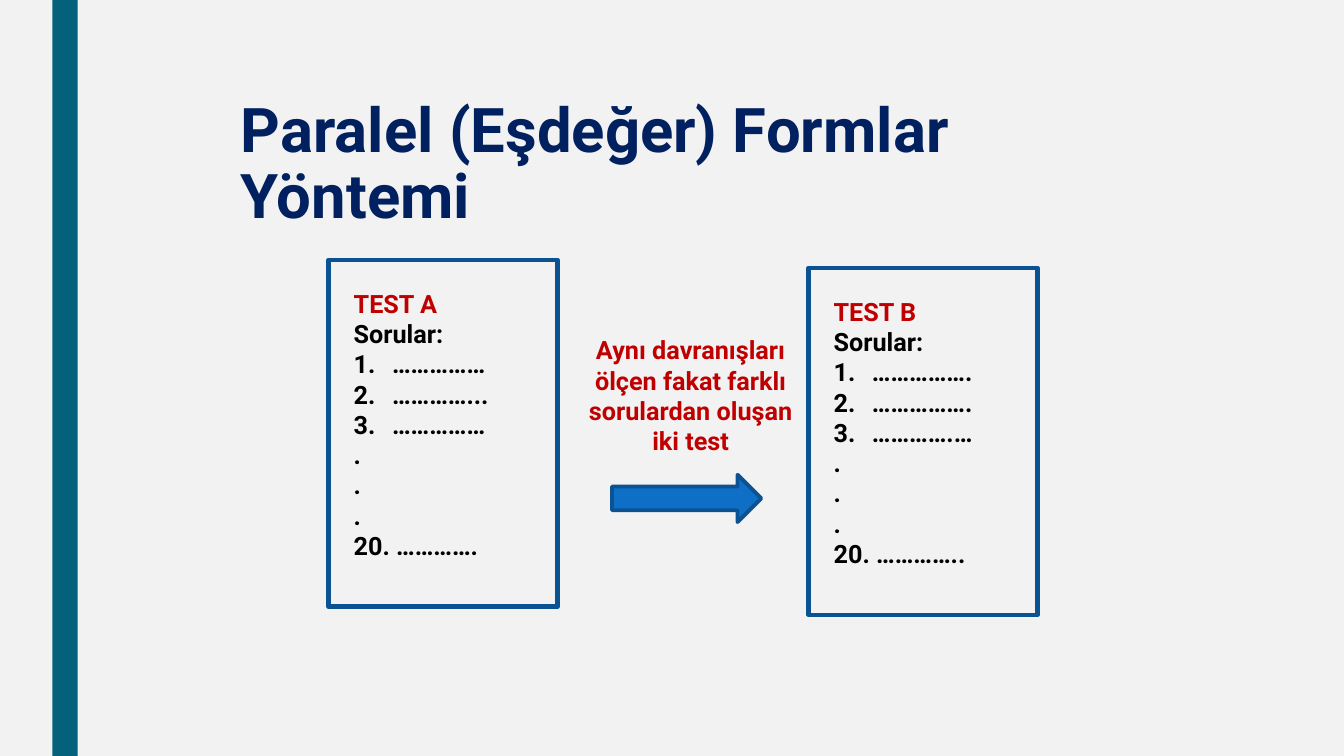
import pptx
import pptx.util
import pptx.dml.color
import pptx.enum.shapes
import pptx.enum.text
import pptx.oxml.ns
import lxml.etree

TITLE = "Paralel (Eşdeğer) Formlar Yöntemi"
NOTE = "Aynı davranışları ölçen fakat farklı sorulardan oluşan iki test"
HEADING = "Sorular:"
DOTS = [".", ".", "."]
TESTS = [
    {"name": "TEST A", "items": ["……………", "…………...", "……………"], "last": "20. ………….", "at": (3.26, 2.58)},
    {"name": "TEST B", "items": ["…………….", "…………….", "………….…"], "last": "20. …………..", "at": (8.02, 2.66)},
]
COLORS = {"back": "F2F2F2", "band": "04617B", "frame": "0B5292", "arrow": "0F6FC6",
          "title": "002060", "accent": "C00000", "body": "000000"}
W, H = 13.33, 7.5
CARD = (2.27, 3.44)
PAD = (0.15, 0.23)
LIST = (1.95, 2.83)
INDENT = 0.38
SHAPES = pptx.enum.shapes.MSO_SHAPE
ALIGN = pptx.enum.text.PP_ALIGN

prs = pptx.Presentation()
prs.slide_width, prs.slide_height = pptx.util.Inches(W), pptx.util.Inches(H)
s = prs.slides.add_slide(prs.slide_layouts[6])


def color(name):
    return pptx.dml.color.RGBColor.from_string(COLORS[name])


def inches(*values):
    return [pptx.util.Inches(v) for v in values]


def add_shape(kind, box, fill=None, line=None, width=0):
    sp = s.shapes.add_shape(kind, *inches(*box))
    sp.shadow.inherit = False
    if fill:
        sp.fill.solid()
        sp.fill.fore_color.rgb = color(fill)
    else:
        sp.fill.background()
    if line:
        sp.line.color.rgb = color(line)
        sp.line.width = pptx.util.Pt(width)
    else:
        sp.line.fill.background()


def add_text(box, lines, size=18, **layout):
    tf = s.shapes.add_textbox(*inches(*box)).text_frame
    tf.word_wrap = True
    tf.vertical_anchor = pptx.enum.text.MSO_ANCHOR.TOP
    for i, (text, tone, style) in enumerate(lines):
        p = tf.paragraphs[0] if i == 0 else tf.add_paragraph()
        for key, value in layout.items():
            setattr(p, key, value)
        r = p.add_run()
        r.text = text
        font = {"name": "Roboto", "size": pptx.util.Pt(size), "bold": True}
        for key, value in font.items():
            setattr(r.font, key, value)
        r.font.color.rgb = color(tone)
        if style != "plain":
            pPr = p._p.get_or_add_pPr()
            pPr.set("marL", str(pptx.util.Inches(INDENT)))
            pPr.set("indent", str(-pptx.util.Inches(INDENT)))
        if style == "number":
            bullet = lxml.etree.SubElement(pPr, pptx.oxml.ns.qn("a:buAutoNum"))
            bullet.set("type", "arabicPeriod")


s.background.fill.solid()
s.background.fill.fore_color.rgb = color("back")
add_shape(SHAPES.RECTANGLE, (0.52, 0, 0.25, H), fill="band")

for test in TESTS:
    x, y = test["at"]
    add_shape(SHAPES.RECTANGLE, (x, y, *CARD), line="frame", width=3.25)
    lines = [(test["name"], "accent", "plain"), (HEADING, "body", "plain")]
    lines += [(item, "body", "number") for item in test["items"]]
    lines += [(text, "body", "hanging") for text in DOTS + [test["last"]]]
    add_text((x + PAD[0], y + PAD[1], *LIST), lines)

add_shape(SHAPES.RIGHT_ARROW, (6.07, 4.71, 1.48, 0.47), fill="arrow", line="frame", width=2.75)
add_text((5.68, 3.27, 2.34, 1.31), [(NOTE, "accent", "plain")], alignment=ALIGN.CENTER)
add_text((2.29, 0.94, 9, 1.25), [(TITLE, "title", "plain")], size=44, line_spacing=0.89)

prs.save("out.pptx")
